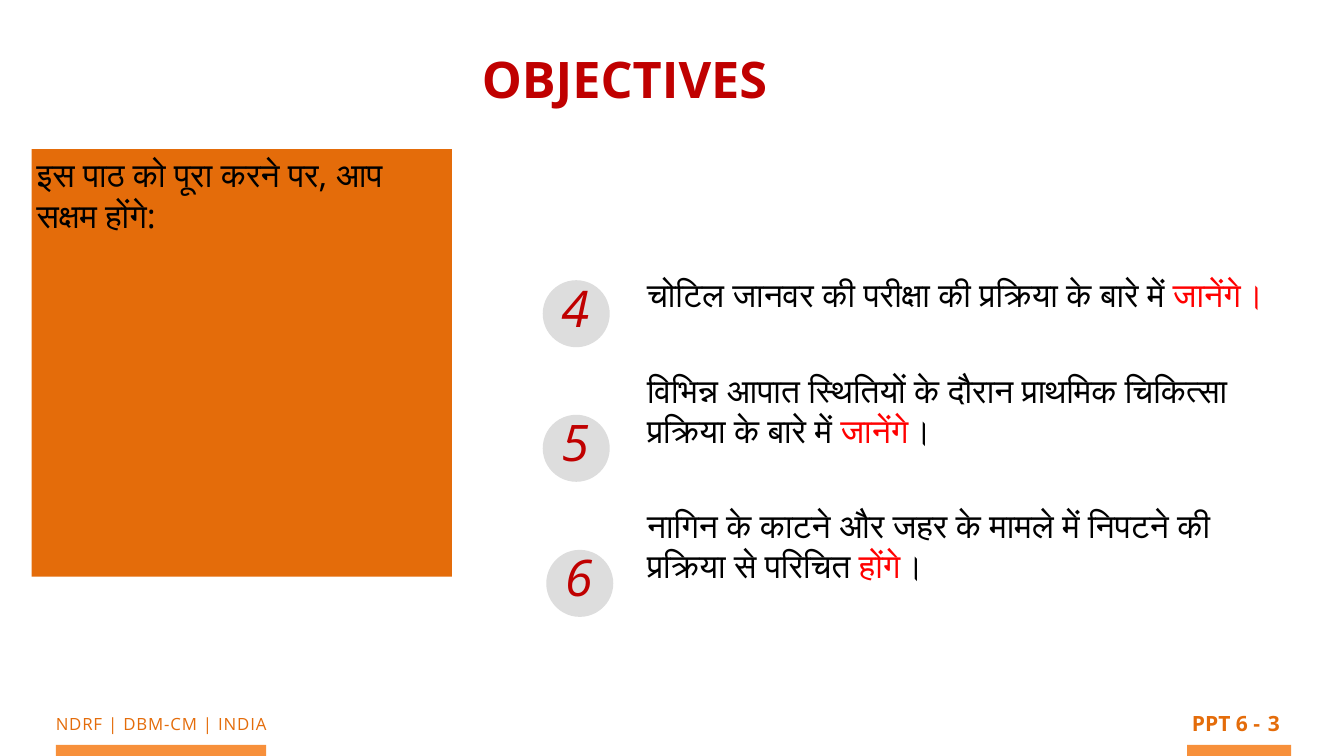
from pptx import Presentation
from pptx.dml.color import RGBColor
from pptx.enum.shapes import MSO_SHAPE
from pptx.enum.text import MSO_ANCHOR, MSO_AUTO_SIZE, PP_ALIGN
from pptx.util import Inches, Pt

COLORS = {"orange": "E46C0A", "bar": "F7903B", "dark_red": "C00000",
          "red": "FF0000", "black": "000000", "grey": "DDDDDD"}
FONT = "Open Sans"


def add_shape(kind, x, y, w, h, color):
    sp = s.shapes.add_shape(kind, Inches(x), Inches(y), Inches(w), Inches(h))
    sp.shadow.inherit = False
    sp.fill.solid()
    sp.fill.fore_color.rgb = RGBColor.from_string(COLORS[color])
    sp.line.fill.background()
    return sp


def write(sp, paragraphs, size, bold=False, italic=False,
          align=PP_ALIGN.LEFT, gap=0, inset=0.09, wrap=True):
    tf = sp.text_frame
    tf.auto_size = MSO_AUTO_SIZE.NONE
    tf.word_wrap = wrap
    tf.vertical_anchor = MSO_ANCHOR.TOP
    tf.margin_left = tf.margin_right = Inches(inset)
    tf.margin_top = tf.margin_bottom = Inches(inset)
    for i, runs in enumerate(paragraphs):
        p = tf.add_paragraph() if i else tf.paragraphs[0]
        p.alignment = align
        if i:
            p.space_before = Pt(gap)
        for text, color in runs:
            r = p.add_run()
            r.text = text
            r.font.name = FONT
            r.font.size = Pt(size)
            r.font.bold = bold
            r.font.italic = italic
            r.font.color.rgb = RGBColor.from_string(COLORS[color])
    return tf


prs = Presentation()
prs.slide_width = Inches(26.67)
prs.slide_height = Inches(15)
s = prs.slides.add_slide(prs.slide_layouts[5])

title = s.shapes.title
title.left, title.top = Inches(9.47), Inches(0.86)
title.width, title.height = Inches(5.85), Inches(1.53)
write(title, [[("OBJECTIVES", "dark_red")]], 72, bold=True, wrap=False)

for x, w in [(1.11, 4.17), (23.56, 2.06)]:
    add_shape(MSO_SHAPE.RECTANGLE, x, 14.78, w, 0.22, "bar")

footers = [
    ("NDRF | DBM-CM | INDIA", 0.66, 14.08, 5.08, 0.58, 24, False),
    ("PPT 6 -", 23.56, 14.01, 1.54, 0.68, 30, True),
    ("3", 25.07, 14.01, 0.42, 0.74, 30, True),
]
for text, x, y, w, h, size, bold in footers:
    tb = s.shapes.add_textbox(Inches(x), Inches(y), Inches(w), Inches(h))
    tf = write(tb, [[(text, "orange")]], size, bold=bold,
               align=PP_ALIGN.CENTER, wrap=not text.startswith("PPT"))
    if not bold:
        tf.paragraphs[0].runs[0].font._element.set("spc", "120")

panel = add_shape(MSO_SHAPE.RECTANGLE, 0.63, 2.96, 8.34, 8.48, "orange")
write(panel, [[("इस पाठ को पूरा करने पर, आप सक्षम होंगे:", "black")]], 48, inset=0.1)

objectives = [
    [("चोटिल जानवर की परीक्षा की प्रक्रिया के बारे में ", "black"),
     ("जानेंगे।", "red")],
    [("विभिन्न आपात स्थितियों के दौरान प्राथमिक चिकित्सा प्रक्रिया के बारे में ", "black"),
     ("जानेंगे", "red"), ("।", "black")],
    [("नागिन के काटने और जहर के मामले में निपटने की प्रक्रिया से परिचित ", "black"),
     ("होंगे", "red"), ("।", "black")],
]
tb = s.shapes.add_textbox(Inches(12.75), Inches(5.35), Inches(12.77), Inches(7.2))
write(tb, objectives, 48, gap=78.5)

for number, x, y in [("4", 10.77, 5.56), ("5", 10.77, 8.23), ("6", 10.84, 10.91)]:
    add_shape(MSO_SHAPE.OVAL, x, y, 1.33, 1.33, "grey")
    tb = s.shapes.add_textbox(Inches(x + 0.28), Inches(y - 0.16), Inches(0.9), Inches(1.84))
    write(tb, [[(number, "dark_red")]], 72, italic=True)

prs.save("out.pptx")
